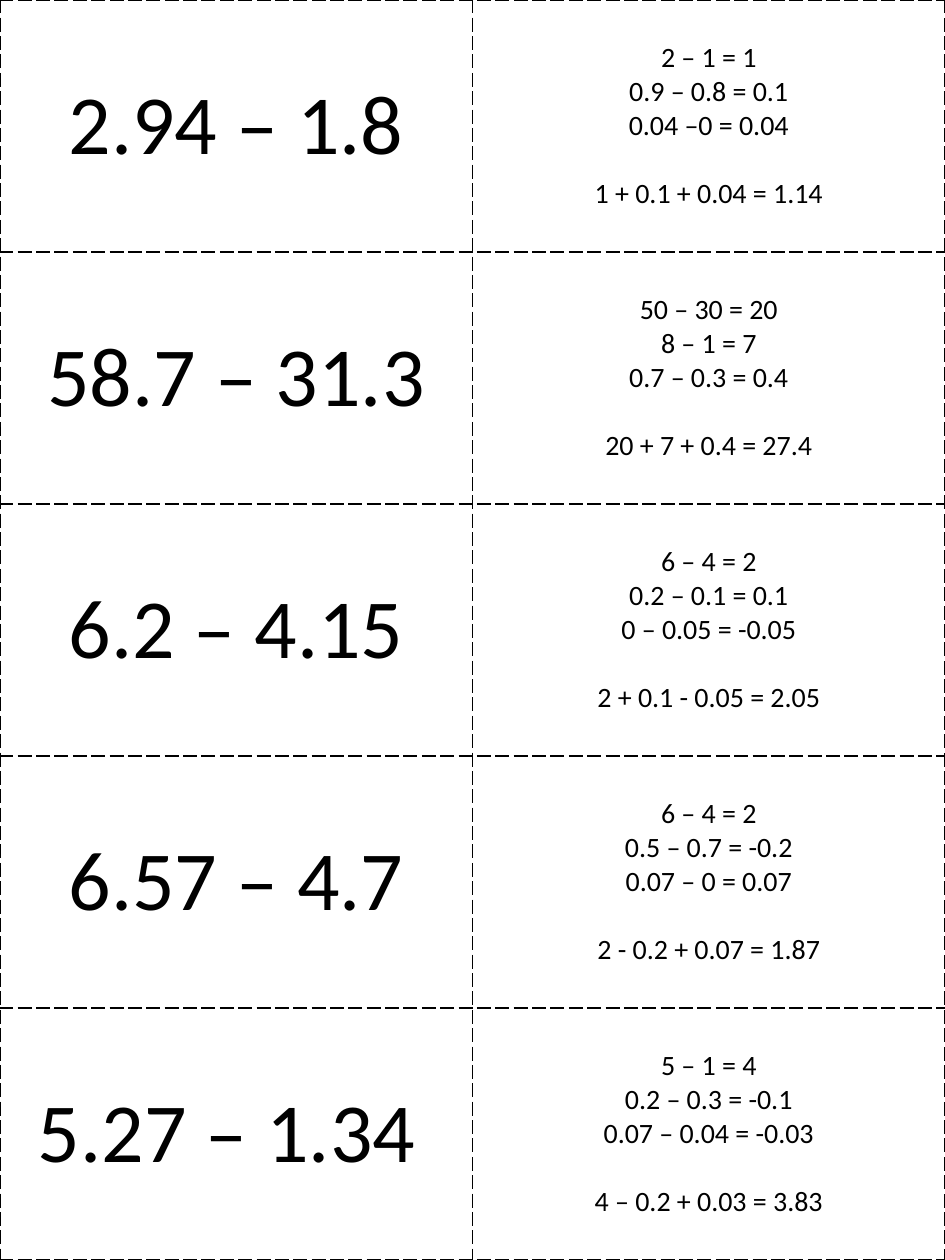
import pptx
import pptx.dml.color
import pptx.enum.text
import pptx.oxml.ns
import pptx.util
from lxml import etree

BLACK = pptx.dml.color.RGBColor(0x00, 0x00, 0x00)
WHITE = pptx.dml.color.RGBColor(0xFF, 0xFF, 0xFF)

# Each card: the question, its partial differences, and their total
CARDS = [
    ("2.94 – 1.8", ["2 – 1 = 1", "0.9 – 0.8 = 0.1", "0.04 –0 = 0.04"],
     "1 + 0.1 + 0.04 = 1.14"),
    ("58.7 – 31.3", ["50 – 30 = 20", "8 – 1 = 7", "0.7 – 0.3 = 0.4"],
     "20 + 7 + 0.4 = 27.4"),
    ("6.2 – 4.15", ["6 – 4 = 2", "0.2 – 0.1 = 0.1", "0 – 0.05 = -0.05"],
     "2 + 0.1 - 0.05 = 2.05"),
    ("6.57 – 4.7", ["6 – 4 = 2", "0.5 – 0.7 = -0.2", "0.07 – 0 = 0.07"],
     "2 - 0.2 + 0.07 = 1.87"),
    ("5.27 – 1.34 ", ["5 – 1 = 4", "0.2 – 0.3 = -0.1", "0.07 – 0.04 = -0.03"],
     "4 – 0.2 + 0.03 = 3.83"),
]


class CardSheet:
    """Holds the style and the current slide."""

    FONT = {"name": "Calibri"}
    CELL = {
        "margin_left": pptx.util.Inches(0.07),
        "margin_right": pptx.util.Inches(0.07),
        "margin_top": 0,
        "margin_bottom": 0,
        "vertical_anchor": pptx.enum.text.MSO_ANCHOR.MIDDLE,
    }
    QUESTION_SIZE = pptx.util.Pt(48)
    WORKING_SIZE = pptx.util.Pt(16)
    TOTAL_GAP = pptx.util.Pt(19.5)
    BORDER_WIDTH = pptx.util.Pt(1)

    def __init__(self, deck):
        self.width, self.height = deck.slide_width, deck.slide_height
        self.slide = deck.slides.add_slide(deck.slide_layouts[6])
        background = self.slide.background.fill
        background.solid()
        background.fore_color.rgb = WHITE

    @staticmethod
    def apply(target, values):
        for name, value in values.items():
            setattr(target, name, value)

    def grid(self, rows, columns):
        """Add a plain table that divides the whole slide equally."""
        table = self.slide.shapes.add_table(
            rows, columns, 0, 0, self.width, self.height).table
        self.apply(table, {"first_row": False, "horz_banding": False})
        for cell in table.iter_cells():
            self.apply(cell, self.CELL)
            self.border(cell)
            cell.fill.background()
        return table

    def border(self, cell):
        """Draw a dashed cutting line on every side of a cell."""
        qn = pptx.oxml.ns.qn
        properties = cell._tc.get_or_add_tcPr()
        for side in ("a:lnL", "a:lnR", "a:lnT", "a:lnB"):
            line = etree.SubElement(properties, qn(side), w=str(self.BORDER_WIDTH))
            fill = etree.SubElement(line, qn("a:solidFill"))
            etree.SubElement(fill, qn("a:srgbClr"), val=str(BLACK))
            etree.SubElement(line, qn("a:prstDash"), val="lgDash")

    def fill_text(self, cell, lines, size):
        """Fill a cell with centred lines and return its paragraphs."""
        frame = cell.text_frame
        frame.text = "\n".join(lines)
        for paragraph in frame.paragraphs:
            paragraph.alignment = pptx.enum.text.PP_ALIGN.CENTER
            for run in paragraph.runs:
                self.apply(run.font, {**self.FONT, "size": size})
                run.font.color.rgb = BLACK
        return frame.paragraphs

    def card(self, table, row, question, steps, total):
        """Put a question on the left and its working on the right."""
        self.fill_text(table.cell(row, 0), [question], self.QUESTION_SIZE)
        working = self.fill_text(
            table.cell(row, 1), [*steps, total], self.WORKING_SIZE)
        working[-1].space_before = self.TOTAL_GAP


def main():
    deck = pptx.Presentation()
    deck.slide_width = pptx.util.Inches(7.5)
    deck.slide_height = pptx.util.Inches(10)

    # Question and answer cards
    sheet = CardSheet(deck)
    cards = sheet.grid(len(CARDS), 2)
    for row, (question, steps, total) in enumerate(CARDS):
        sheet.card(cards, row, question, steps, total)

    deck.save("out.pptx")


if __name__ == "__main__":
    main()
